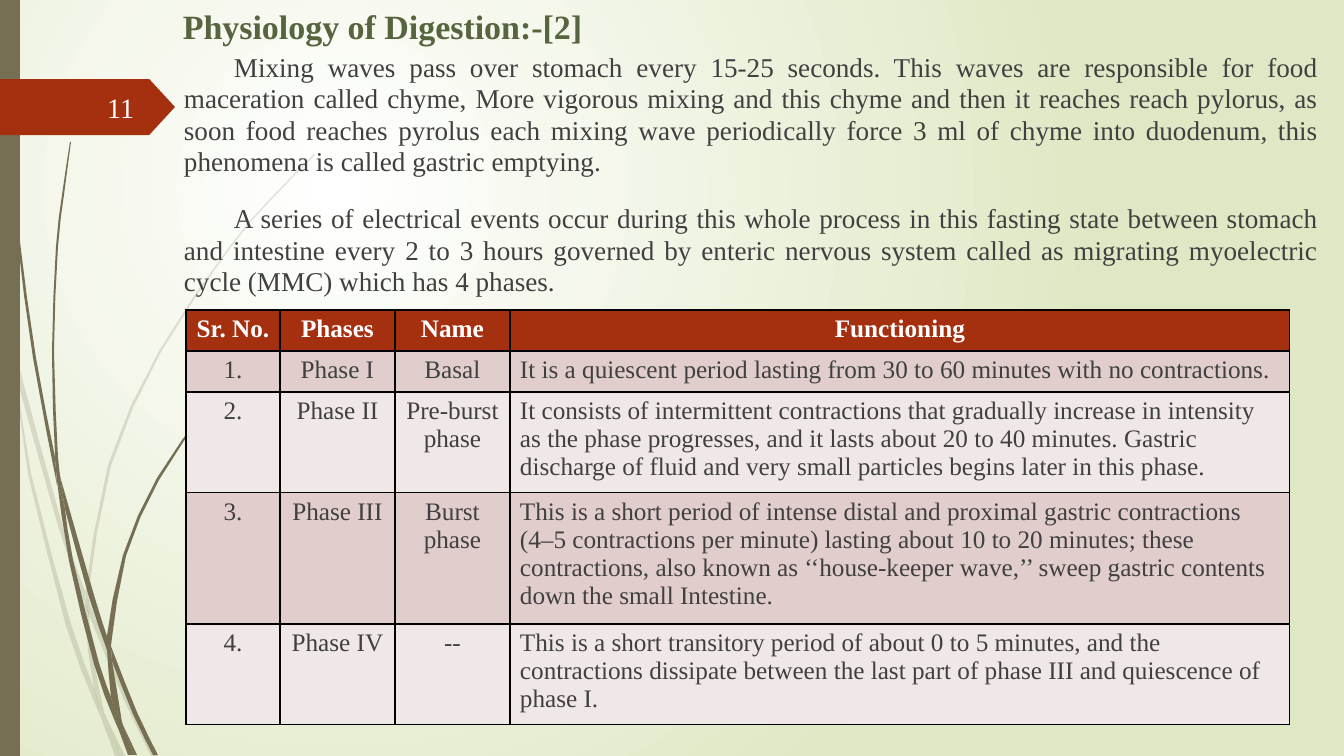
import dataclasses

import lxml.etree
import pptx
import pptx.dml.color
import pptx.enum.shapes
import pptx.enum.text
import pptx.oxml.ns
import pptx.util

SLIDE_WIDTH, SLIDE_HEIGHT = 1344, 756
EMU_PER_PX = 12192000 / SLIDE_WIDTH
ALIGN = pptx.enum.text.PP_ALIGN
ANCHOR = pptx.enum.text.MSO_ANCHOR
PRESET = pptx.enum.shapes.MSO_SHAPE


@dataclasses.dataclass(frozen=True)
class Theme:
    font: str = "Times New Roman"
    white: str = "FFFFFF"
    meadow: str = "DFE8C4"
    stem: str = "766F54"
    rust: str = "A53010"
    title: str = "56653E"
    body: str = "404040"
    border: str = "000000"
    bands: tuple = ("E1CDCC", "F0E8E7")
    title_size: float = 24.3
    body_size: float = 19.4
    table_size: float = 18
    number_size: float = 20


THEME = Theme()

PALE_STEMS = [
    ([(0, 284), (11, 353)], [(10, 347), (0, 301)]),
    ([(14, 348), (62, 524), (85, 591)], [(85, 604), (58, 526), (17, 379)]),
    ([(89, 601), (93, 612), (128, 698), (156, 756)], [(151, 756), (124, 700), (89, 615)]),
    ([(106, 717), (125, 756)], [(120, 756)]),
    ([(11, 353), (17, 379), (31, 473), (71, 624), (94, 688), (100, 713), (102, 720)],
     [(93, 699), (66, 626), (28, 474)]),
    ([(85, 604), (89, 613), (92, 651), (104, 712), (106, 717)], [(97, 698), (94, 688), (88, 651)]),
    ([(314, 154), (270, 199), (230, 246), (159, 351), (108, 465), (86, 589), (86, 591)],
     [(89, 601), (89, 589), (111, 466), (161, 352), (231, 247), (271, 200), (315, 155)]),
    ([(102, 720), (115, 756)], [(120, 756)]),
    ([(86, 591), (89, 601)], [(89, 615), (85, 604)]),
    ([(94, 688), (97, 698), (106, 717), (120, 756)], [(102, 720), (100, 713)]),
]
DARK_STEMS = [
    ([(3, 0), (7, 111), (17, 235), (33, 358), (57, 485)],
     [(55, 457), (36, 358), (19, 234), (8, 110), (4, 0)]),
    ([(60, 476), (94, 595), (107, 636)], [(107, 650), (89, 597), (65, 509)]),
    ([(111, 646), (114, 654), (137, 712), (158, 755)], [(153, 755), (133, 714), (112, 661)]),
    ([(57, 481), (69, 561), (94, 664), (112, 714), (118, 728)],
     [(117, 723), (111, 697), (99, 663), (73, 560), (65, 509)]),
    ([(70, 142), (62, 195), (56, 247), (52, 352), (55, 453), (60, 476)],
     [(58, 457), (54, 352), (58, 247), (64, 195), (71, 142)]),
    ([(123, 725), (137, 755)], [(134, 755)]),
    ([(55, 453), (60, 476), (65, 509)], [(57, 481), (55, 457)]),
    ([(262, 347), (233, 376), (206, 408), (157, 478), (123, 555), (107, 636), (111, 646)],
     [(112, 638), (126, 556), (159, 480), (207, 409), (233, 377), (263, 347)]),
    ([(118, 728), (128, 755)], [(132, 755)]),
    ([(107, 650), (111, 697), (117, 712), (123, 725)], [(122, 722), (112, 661), (110, 656)]),
    ([(107, 636), (111, 646)], [(112, 661), (107, 650)]),
    ([(111, 697), (117, 712), (123, 725), (134, 755)], [(131, 755), (118, 728), (117, 723)]),
]

BODY = [
    "Mixing waves pass over stomach every 15-25 seconds. This waves are responsible for food maceration called chyme, More vigorous mixing and this chyme and then it reaches reach pylorus, as soon food reaches pyrolus each mixing wave periodically force 3 ml of chyme into duodenum, this phenomena is called gastric emptying.",
    "A series of electrical events occur during this whole process in this fasting state between stomach and intestine every 2 to 3 hours governed by enteric nervous system called as migrating myoelectric cycle (MMC) which has 4 phases.",
]
PHASES = [
    ("Sr. No.", "Phases", "Name", "Functioning"),
    ("1.", "Phase I", "Basal", "It is a quiescent period lasting from 30 to 60 minutes with no contractions."),
    ("2.", "Phase II", "Pre-burst phase", "It consists of intermittent contractions that gradually increase in intensity as the phase progresses, and it lasts about 20 to 40 minutes. Gastric discharge of fluid and very small particles begins later in this phase."),
    ("3.", "Phase III", "Burst phase", "This is a short period of intense distal and proximal gastric contractions (4–5 contractions per minute) lasting about 10 to 20 minutes; these contractions, also known as ‘‘house-keeper wave,’’ sweep gastric contents down the small Intestine."),
    ("4.", "Phase IV", "--", "This is a short transitory period of about 0 to 5 minutes, and the contractions dissipate between the last part of phase III and quiescence of phase I."),
]
COLUMN_WIDTHS = (94, 115, 115, 780)
ROW_HEIGHT = 41


def emu(px):
    return pptx.util.Emu(round(px * EMU_PER_PX))


def rgb(color):
    return pptx.dml.color.RGBColor.from_string(color)


def set_values(target, values):
    for name, value in values.items():
        setattr(target, name, value)


def add_node(parent, tag, **attributes):
    return lxml.etree.SubElement(parent, pptx.oxml.ns.qn(tag), attributes)


def paint_background(slide):
    fill = slide.background.fill
    fill.gradient()
    for stop, color in zip(fill.gradient_stops, (THEME.white, THEME.meadow)):
        stop.color.rgb = rgb(color)
    gradient = next(slide._element.iter(pptx.oxml.ns.qn("a:gradFill")))
    gradient.remove(gradient.find(pptx.oxml.ns.qn("a:lin")))
    circle = add_node(gradient, "a:path", path="circle")
    add_node(circle, "a:fillToRect", l="50000", t="50000", r="100000", b="100000")


def finish_shape(shape, color, alpha=100):
    shape.shadow.inherit = False
    shape.fill.solid()
    shape.fill.fore_color.rgb = rgb(color)
    shape.line.fill.background()
    if alpha < 100:
        paint = next(shape._element.spPr.iter(pptx.oxml.ns.qn("a:srgbClr")))
        add_node(paint, "a:alpha", val=str(alpha * 1000))


def smooth(points, steps=2):
    padded = [points[0], *points, points[-1]]
    curve = [points[0]]
    for a, b, c, d in zip(padded, padded[1:], padded[2:], padded[3:]):
        for t in (step / steps for step in range(1, steps + 1)):
            curve.append(tuple(
                (2 * q + (r - p) * t + (2 * p - 5 * q + 4 * r - s) * t ** 2
                 + (3 * q - p - 3 * r + s) * t ** 3) / 2
                for p, q, r, s in zip(a, b, c, d)))
    return curve


def add_stems(slide, stems, alpha):
    group = slide.shapes.add_group_shape()
    for left_edge, right_edge in stems:
        outline = [(emu(x), emu(y)) for x, y in smooth(left_edge) + smooth(right_edge)]
        builder = group.shapes.build_freeform(*outline[0], scale=1.0)
        builder.add_line_segments(outline[1:], close=True)
        finish_shape(builder.convert_to_shape(), THEME.stem, alpha)


def add_block(slide, preset, box, color):
    shape = slide.shapes.add_shape(preset, *map(emu, box))
    finish_shape(shape, color)
    return shape


def write_paragraph(paragraph, text, size, color, bold=False, **layout):
    run = paragraph.add_run()
    run.text = text
    set_values(run.font, {"name": THEME.font, "size": pptx.util.Pt(size), "bold": bold})
    run.font.color.rgb = rgb(color)
    set_values(paragraph, layout)


def add_text(slide, box, lines, size, color, anchor=ANCHOR.TOP, indent=0, **style):
    frame = slide.shapes.add_textbox(*map(emu, box)).text_frame
    set_values(frame, {"word_wrap": True, "vertical_anchor": anchor})
    for index, line in enumerate(lines):
        paragraph = frame.add_paragraph() if index else frame.paragraphs[0]
        write_paragraph(paragraph, line, size, color, **style)
        if indent:
            paragraph._p.get_or_add_pPr().set("indent", str(emu(indent)))


def add_borders(cell):
    properties = cell._tc.get_or_add_tcPr()
    for side in ("a:lnL", "a:lnR", "a:lnT", "a:lnB"):
        line = add_node(properties, side, w=str(pptx.util.Pt(1)))
        add_node(add_node(line, "a:solidFill"), "a:srgbClr", val=THEME.border)


def add_phase_table(slide, left, top):
    size = map(emu, (left, top, sum(COLUMN_WIDTHS), ROW_HEIGHT * len(PHASES)))
    table = slide.shapes.add_table(len(PHASES), len(COLUMN_WIDTHS), *size).table
    for column, width in zip(table.columns, COLUMN_WIDTHS):
        column.width = emu(width)
    for row_index, texts in enumerate(PHASES):
        header = row_index == 0
        fill = THEME.rust if header else THEME.bands[(row_index - 1) % 2]
        for column_index, text in enumerate(texts):
            cell = table.cell(row_index, column_index)
            add_borders(cell)
            cell.fill.solid()
            cell.fill.fore_color.rgb = rgb(fill)
            centred = header or column_index < 3
            write_paragraph(cell.text_frame.paragraphs[0], text, THEME.table_size,
                            THEME.white if header else THEME.body, header,
                            alignment=ALIGN.CENTER if centred else ALIGN.LEFT)


def main():
    presentation = pptx.Presentation()
    set_values(presentation, {"slide_width": emu(SLIDE_WIDTH), "slide_height": emu(SLIDE_HEIGHT)})
    slide = presentation.slides.add_slide(presentation.slide_layouts[6])
    paint_background(slide)
    add_stems(slide, PALE_STEMS, 20)
    add_stems(slide, DARK_STEMS, 100)
    add_block(slide, PRESET.RECTANGLE, (0, 0, 20, SLIDE_HEIGHT), THEME.stem)
    number_tag = add_block(slide, PRESET.PENTAGON, (0, 79, 175, 56), THEME.rust)
    number_tag.adjustments[0] = 0.46
    add_text(slide, (173, 1, 983, 68), ["Physiology of Digestion:-[2]"],
             THEME.title_size, THEME.title, bold=True)
    add_text(slide, (174, 47, 1156, 275), BODY, THEME.body_size, THEME.body, indent=50,
             alignment=ALIGN.JUSTIFY, line_spacing=0.97, space_after=pptx.util.Pt(18))
    add_phase_table(slide, 186, 310)
    add_text(slide, (58, 87, 86, 40), ["11"], THEME.number_size, THEME.white,
             ANCHOR.MIDDLE, alignment=ALIGN.RIGHT)
    presentation.save("out.pptx")


if __name__ == "__main__":
    main()
